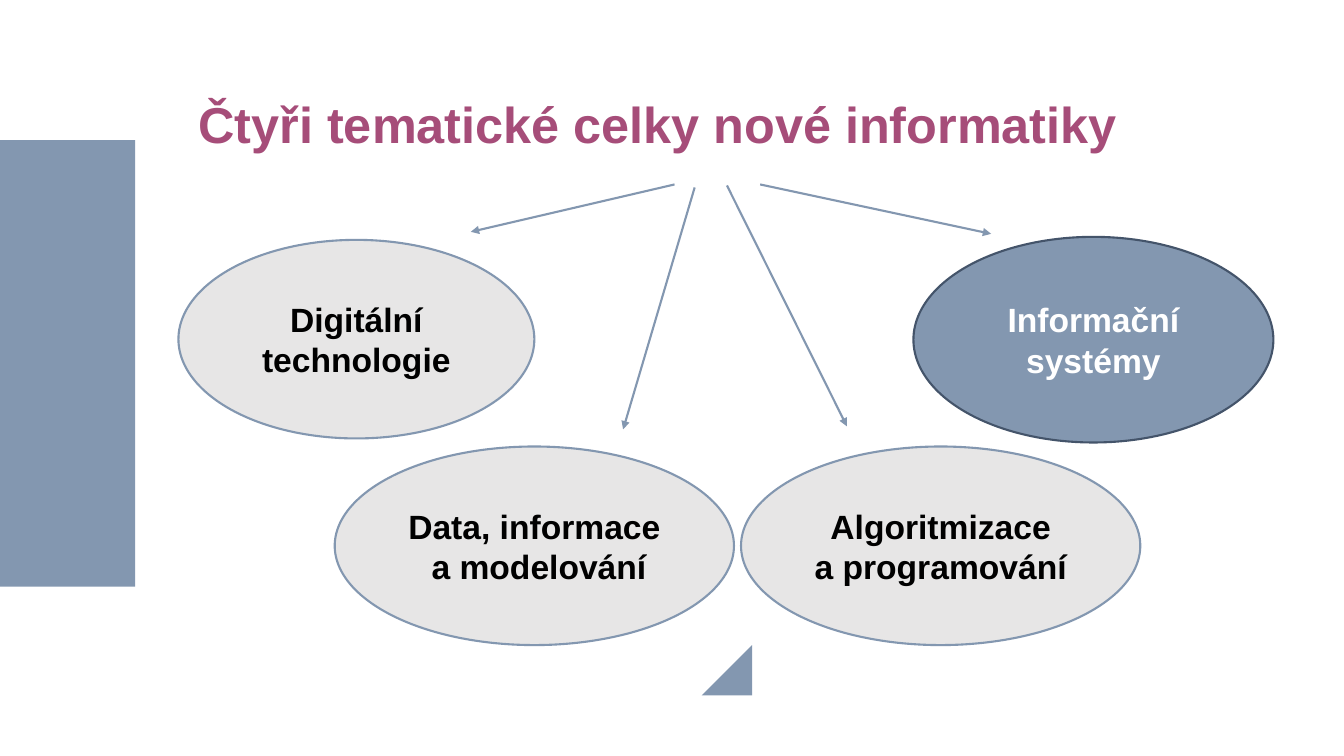
from lxml.etree import SubElement
from pptx import Presentation
from pptx.dml.color import RGBColor
from pptx.enum.shapes import MSO_CONNECTOR, MSO_SHAPE
from pptx.enum.text import MSO_ANCHOR, PP_ALIGN
from pptx.oxml.ns import qn
from pptx.util import Inches, Pt

STEEL = RGBColor(0x83, 0x97, 0xB0)
SLATE = RGBColor(0x44, 0x54, 0x6A)
PALE = RGBColor(0xE7, 0xE6, 0xE6)
PLUM = RGBColor(0xA6, 0x4D, 0x79)
BLACK = RGBColor(0, 0, 0)
WHITE = RGBColor(0xFF, 0xFF, 0xFF)


class TopicSlide:
    """Style and slide; lengths are columns and rows of a tenth-inch grid."""
    cell = Inches(0.1)
    font = "Arial"
    line_width = Pt(1.5)

    def __init__(self, deck):
        self.slide = deck.slides.add_slide(deck.slide_layouts[6])

    def grid(self, *cells):
        return [round(count * self.cell) for count in cells]

    def label(self, shape, text, size, color, align, anchor, inset_rows):
        frame = shape.text_frame
        frame.word_wrap = True
        frame.vertical_anchor = anchor
        frame.margin_left = frame.margin_right = self.cell
        frame.margin_top, frame.margin_bottom = self.grid(inset_rows, inset_rows)
        para = frame.paragraphs[0]
        para.text = text
        para.alignment = align
        for span in para.runs:
            span.font.name = self.font
            span.font.size = Pt(size)
            span.font.bold = True
            span.font.color.rgb = color
        return para

    def title(self, text, place):
        box = self.slide.shapes.add_textbox(*self.grid(*place))
        para = self.label(box, text, 36, PLUM, PP_ALIGN.LEFT, MSO_ANCHOR.BOTTOM, 0.5)
        para.line_spacing = 0.7

    def block(self, kind, place, fill=STEEL, outline=None):
        shape = self.slide.shapes.add_shape(kind, *self.grid(*place))
        shape.shadow.inherit = False
        shape.fill.solid()
        shape.fill.fore_color.rgb = fill
        if outline is None:
            shape.line.fill.background()
        else:
            shape.line.color.rgb = outline
            shape.line.width = self.line_width
        return shape

    def topic(self, text, place, fill=PALE, outline=STEEL, color=BLACK):
        oval = self.block(MSO_SHAPE.OVAL, place, fill, outline)
        self.label(oval, text, 24, color, PP_ALIGN.CENTER, MSO_ANCHOR.MIDDLE, 1)

    def arrow(self, start, end):
        connector = self.slide.shapes.add_connector(
            MSO_CONNECTOR.STRAIGHT, *self.grid(*start, *end))
        connector.line.color.rgb = STEEL
        connector.line.width = self.line_width
        properties = connector._element.spPr
        SubElement(properties.find(qn("a:ln")), qn("a:tailEnd"), type="triangle")
        SubElement(properties, qn("a:effectLst"))


def main():
    deck = Presentation()
    deck.slide_width, deck.slide_height = Inches(13.33), Inches(7.5)
    page = TopicSlide(deck)

    # Side band, title and corner triangle
    page.block(MSO_SHAPE.RECTANGLE, (0, 13.9, 13.4, 44.3))
    page.title("Čtyři tematické celky nové informatiky", (18.7, 8.3, 105, 7.3))
    corner = page.block(MSO_SHAPE.RIGHT_TRIANGLE, (69.6, 64, 5, 5))
    corner._element.spPr.find(qn("a:xfrm")).set("flipH", "1")

    # Four topics, the last one highlighted
    page.topic("Digitální technologie", (17.7, 23.8, 35.3, 19.7))
    page.topic("Data, informace\n a modelování", (33.2, 44.3, 39.6, 19.7))
    page.topic("Algoritmizace\na programování", (73.5, 44.3, 39.6, 19.7))
    page.topic("Informační systémy", (90.6, 23.5, 35.7, 20.4), STEEL, SLATE, WHITE)

    # Arrows from the title to the topics
    for start, end in (
        ((66.9, 18.3), (46.7, 23)),
        ((68.9, 18.6), (61.8, 42.6)),
        ((72.1, 18.4), (84, 42.3)),
        ((75.4, 18.3), (98.3, 23.2)),
    ):
        page.arrow(start, end)

    deck.save("out.pptx")


if __name__ == "__main__":
    main()
